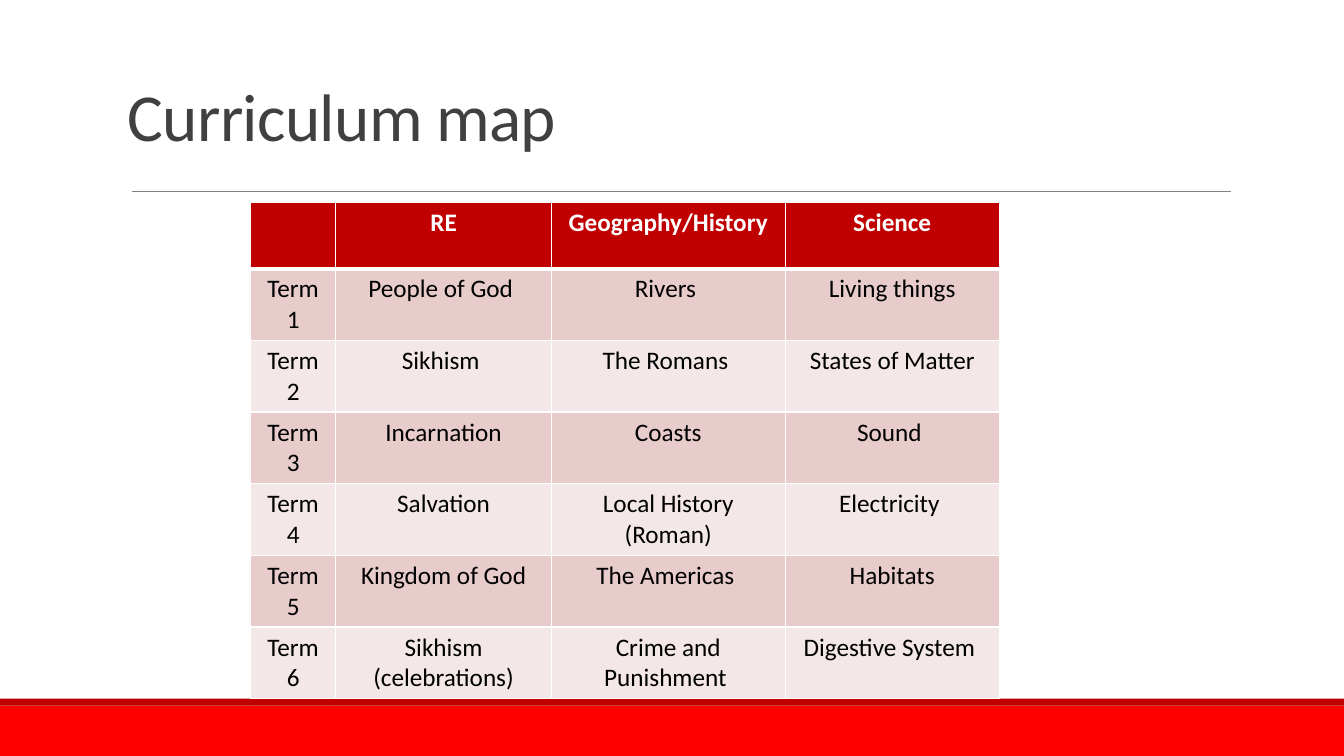
from lxml import etree
from pptx import Presentation
from pptx import util as u
from pptx.dml.color import RGBColor
from pptx.enum import shapes, text
from pptx.oxml import ns

WHITE = RGBColor(0xFF, 0xFF, 0xFF)
BLACK = RGBColor(0, 0, 0)
RED = RGBColor(0xFF, 0, 0)
DARK_RED = RGBColor(0xC0, 0, 0)
ROSE = RGBColor(0xE8, 0xCC, 0xCC)
PALE_ROSE = RGBColor(0xF4, 0xE7, 0xE7)
GREY = RGBColor(0x80, 0x80, 0x80)
CHARCOAL = RGBColor(0x40, 0x40, 0x40)

HEADINGS = ["", "RE", "Geography/History", "Science"]
TOPICS = [
    ["People of God ", "Rivers ", "Living things"],
    ["Sikhism ", "The Romans ", "States of Matter"],
    ["Incarnation", "Coasts", "Sound "],
    ["Salvation", "Local History (Roman)", "Electricity "],
    ["Kingdom of God", "The Americas ", "Habitats"],
    ["Sikhism (celebrations)", "Crime and Punishment ", "Digestive System "],
]
COLUMN_WIDTHS = [61, 154, 167, 153]
HEADER_HEIGHT, TERM_HEIGHT = 47, 51.2


def apply(target, values):
    for name, value in values.items():
        setattr(target, name, value)


class SlideBuilder:
    font = "Calibri"

    def __init__(self, deck):
        self.slide = deck.slides.add_slide(deck.slide_layouts[5])

    def add_words(self, paragraph, wording, alignment, size, color, bold=False):
        paragraph.alignment = alignment
        run = paragraph.add_run()
        run.text = wording
        apply(run.font, {"name": self.font, "size": u.Pt(size), "bold": bold})
        run.font.color.rgb = color
        return run

    def title(self, wording, left, top, width, height):
        heading = self.slide.shapes.title
        apply(heading, {"left": u.Pt(left), "top": u.Pt(top),
                        "width": u.Pt(width), "height": u.Pt(height)})
        frame = heading.text_frame
        apply(frame, {"word_wrap": True, "auto_size": text.MSO_AUTO_SIZE.NONE,
                      "vertical_anchor": text.MSO_ANCHOR.BOTTOM})
        line = frame.paragraphs[0]
        line.line_spacing = 0.85
        run = self.add_words(line, wording, text.PP_ALIGN.LEFT, 48, CHARCOAL)
        run._r.get_or_add_rPr().set("spc", "-50")

    def band(self, left, top, width, height, color):
        strip = self.slide.shapes.add_shape(
            shapes.MSO_SHAPE.RECTANGLE, u.Pt(left), u.Pt(top), u.Pt(width), u.Pt(height))
        strip.shadow.inherit = False
        strip.fill.solid()
        strip.fill.fore_color.rgb = color
        strip.line.fill.background()

    def rule(self, left, right, y):
        divider = self.slide.shapes.add_connector(
            shapes.MSO_CONNECTOR.STRAIGHT, u.Pt(left), u.Pt(y), u.Pt(right), u.Pt(y))
        divider.line.width = u.Pt(0.5)
        divider.line.color.rgb = GREY
        etree.SubElement(divider._element.spPr, ns.qn("a:effectLst"))

    def borders(self, cell, **widths):
        properties = cell._tc.get_or_add_tcPr()
        for side in "LRTB":
            edge = etree.SubElement(properties, ns.qn(f"a:ln{side}"),
                                    w=str(u.Pt(widths.get(side, 1))))
            paint = etree.SubElement(edge, ns.qn("a:solidFill"))
            etree.SubElement(paint, ns.qn("a:srgbClr"), val=str(WHITE))

    def table(self, rows, left, top, widths, heights):
        grid = self.slide.shapes.add_table(
            len(rows), len(widths), u.Pt(left), u.Pt(top),
            u.Pt(sum(widths)), u.Pt(sum(heights))).table
        for column, width in zip(grid.columns, widths):
            column.width = u.Pt(width)
        for r, (wordings, height) in enumerate(zip(rows, heights)):
            grid.rows[r].height = u.Pt(height)
            header = r == 0
            shade = DARK_RED if header else ROSE if r % 2 else PALE_ROSE
            for c, wording in enumerate(wordings):
                cell = grid.cell(r, c)
                self.borders(cell, B=3 if header else 1, T=3 if r == 1 else 1)
                cell.fill.solid()
                cell.fill.fore_color.rgb = shade
                if wording:
                    self.add_words(cell.text_frame.paragraphs[0], wording,
                                   text.PP_ALIGN.CENTER, 18,
                                   WHITE if header else BLACK, header)


def main():
    deck = Presentation()
    apply(deck, {"slide_width": u.Pt(960), "slide_height": u.Pt(540)})
    page = SlideBuilder(deck)
    page.band(0, 504, 960, 36, RED)
    page.band(0, 499, 960, 5, DARK_RED)
    page.rule(94.3, 879, 136.8)
    page.title("Curriculum map", 84, 0, 792, 114.5)
    terms = [[f"Term {number}", *topics] for number, topics in enumerate(TOPICS, 1)]
    page.table([HEADINGS, *terms], 178.9, 144.9, COLUMN_WIDTHS,
               [HEADER_HEIGHT] + [TERM_HEIGHT] * len(terms))
    deck.save("out.pptx")


if __name__ == "__main__":
    main()
